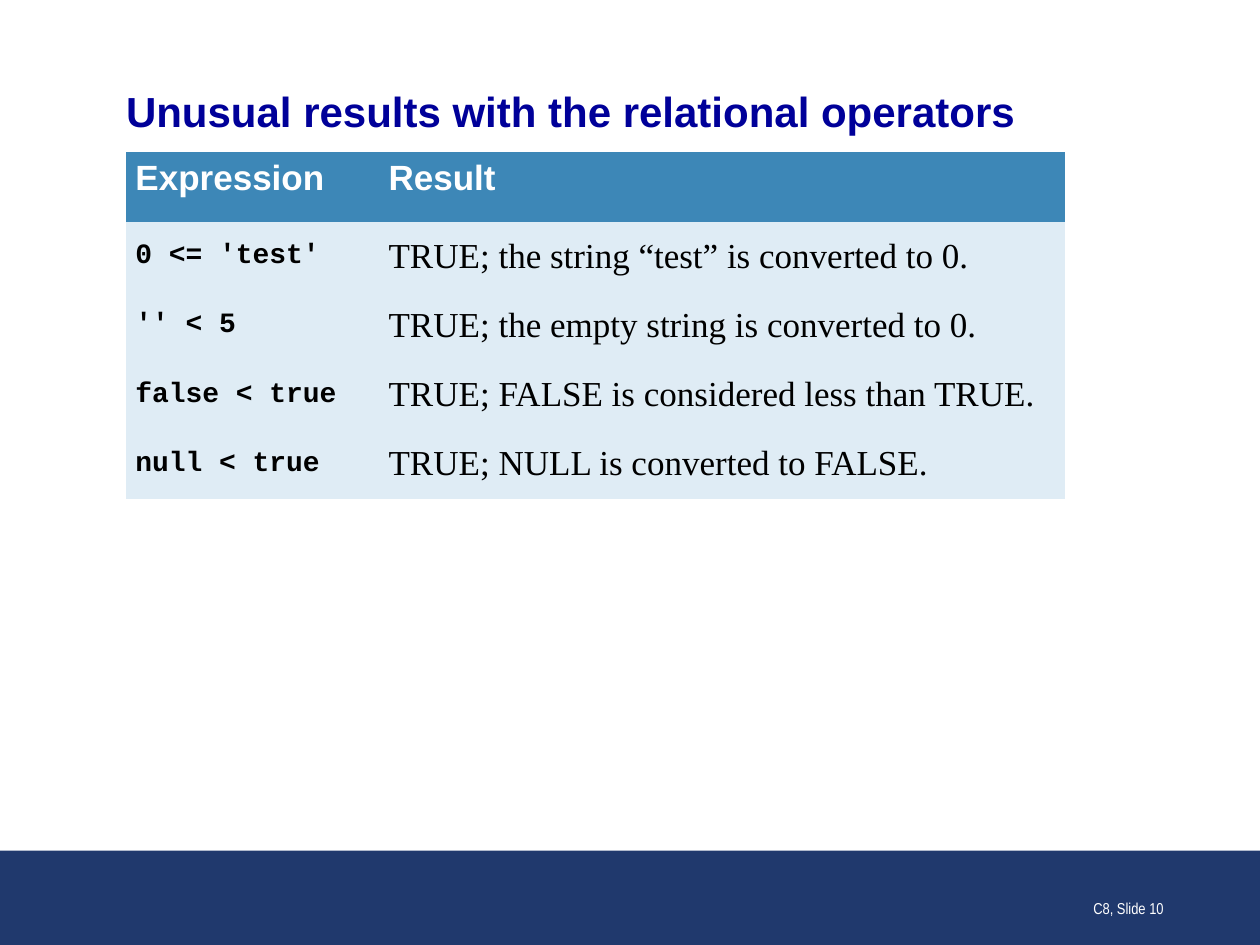
from pptx import Presentation
from pptx.dml.color import RGBColor
from pptx.enum.shapes import MSO_SHAPE
from pptx.enum.text import MSO_ANCHOR, PP_ALIGN
from pptx.oxml.ns import qn
from pptx.util import Pt

TITLE = "Unusual results with the relational operators"
FOOTER = "C8, Slide 10"
HEADINGS = ("Expression", "Result")
RESULTS = [
    ("0 <= 'test'", "TRUE; the string “test” is converted to 0."),
    ("'' < 5", "TRUE; the empty string is converted to 0."),
    ("false < true", "TRUE; FALSE is considered less than TRUE."),
    ("null < true", "TRUE; NULL is converted to FALSE."),
]

COLORS = {
    "title": "000099", "band": "20396D", "header": "3D87B7",
    "body": "DFECF5", "white": "FFFFFF", "black": "000000",
}
HEADING_FONT = ("Arial", 20, "white", True)
COLUMN_FONTS = [
    ("Courier New", 16, "black", True),
    ("Times New Roman", 20, "black", False),
]
PAGE_WIDTH, PAGE_HEIGHT, BAND_HEIGHT = 720, 540, 54
LEFT, TABLE_TOP, ROW_HEIGHT = 72, 87, 39.6
COLUMN_WIDTHS = (144.7, 391.7)
PLAIN_TABLE_STYLE = "{2D5ABB26-0587-4C30-8999-92F81FD0307C}"


def color(name):
    return RGBColor.from_string(COLORS[name])


def write(frame, text, name, size, color_name, bold=False, align=PP_ALIGN.LEFT):
    frame.text = text
    paragraph = frame.paragraphs[0]
    paragraph.alignment = align
    font = paragraph.font
    font.name, font.size, font.bold = name, Pt(size), bold
    font.color.rgb = color(color_name)


def add_band(page):
    band = page.shapes.add_shape(
        MSO_SHAPE.RECTANGLE, 0, Pt(PAGE_HEIGHT - BAND_HEIGHT),
        Pt(PAGE_WIDTH), Pt(BAND_HEIGHT))
    band.shadow.inherit = False
    band.fill.solid()
    band.fill.fore_color.rgb = color("band")
    band.line.fill.background()


def place_title(page):
    title = page.shapes.title
    title.left, title.top, title.width, title.height = map(Pt, (LEFT, 49, 576, 28.8))
    frame = title.text_frame
    frame.margin_left = frame.margin_right = frame.margin_top = frame.margin_bottom = 0
    frame.vertical_anchor = MSO_ANCHOR.MIDDLE
    write(frame, TITLE, "Arial", 24, "title", bold=True)


def add_results_table(page):
    rows = [HEADINGS, *RESULTS]
    table = page.shapes.add_table(
        len(rows), len(HEADINGS), Pt(LEFT), Pt(TABLE_TOP),
        Pt(sum(COLUMN_WIDTHS)), Pt(ROW_HEIGHT * len(rows))).table
    table.horz_banding = False
    table._tbl.tblPr.find(qn("a:tableStyleId")).text = PLAIN_TABLE_STYLE
    for column, width in zip(table.columns, COLUMN_WIDTHS):
        column.width = Pt(width)
    for row_index, texts in enumerate(rows):
        is_header = row_index == 0
        table.rows[row_index].height = Pt(ROW_HEIGHT)
        for column_index, text in enumerate(texts):
            cell = table.cell(row_index, column_index)
            cell.margin_left = cell.margin_right = Pt(5.4)
            cell.margin_top = cell.margin_bottom = Pt(3.6)
            cell.vertical_anchor = MSO_ANCHOR.TOP if is_header else MSO_ANCHOR.MIDDLE
            cell.fill.solid()
            cell.fill.fore_color.rgb = color("header" if is_header else "body")
            font = HEADING_FONT if is_header else COLUMN_FONTS[column_index]
            write(cell.text_frame, text, *font)


def add_footer(page):
    box = page.shapes.add_textbox(Pt(522), Pt(492), Pt(150), Pt(36))
    frame = box.text_frame
    frame.word_wrap = True
    frame.vertical_anchor = MSO_ANCHOR.BOTTOM
    write(frame, FOOTER, "Arial Narrow", 9, "white", align=PP_ALIGN.RIGHT)


def main():
    deck = Presentation()
    deck.slide_width, deck.slide_height = Pt(PAGE_WIDTH), Pt(PAGE_HEIGHT)
    page = deck.slides.add_slide(deck.slide_layouts[5])
    add_band(page)
    place_title(page)
    add_results_table(page)
    add_footer(page)
    deck.save("out.pptx")


if __name__ == "__main__":
    main()
